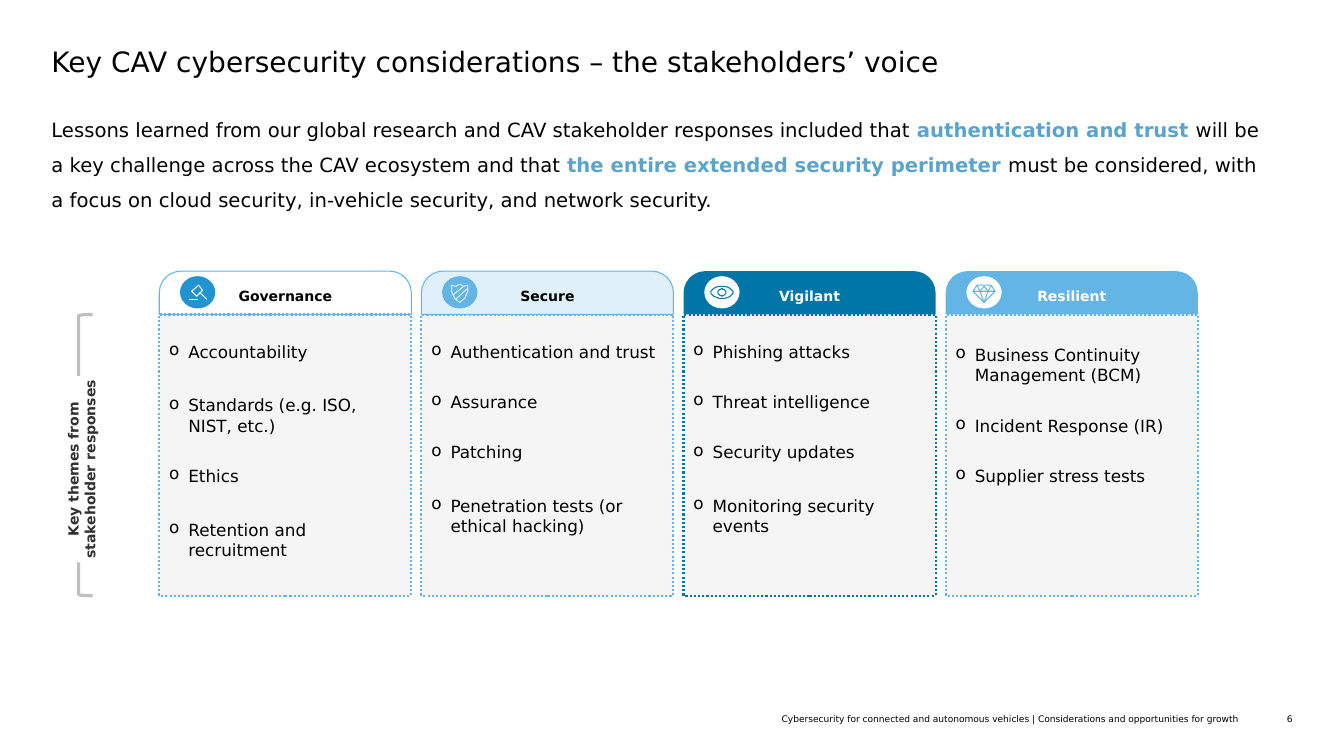
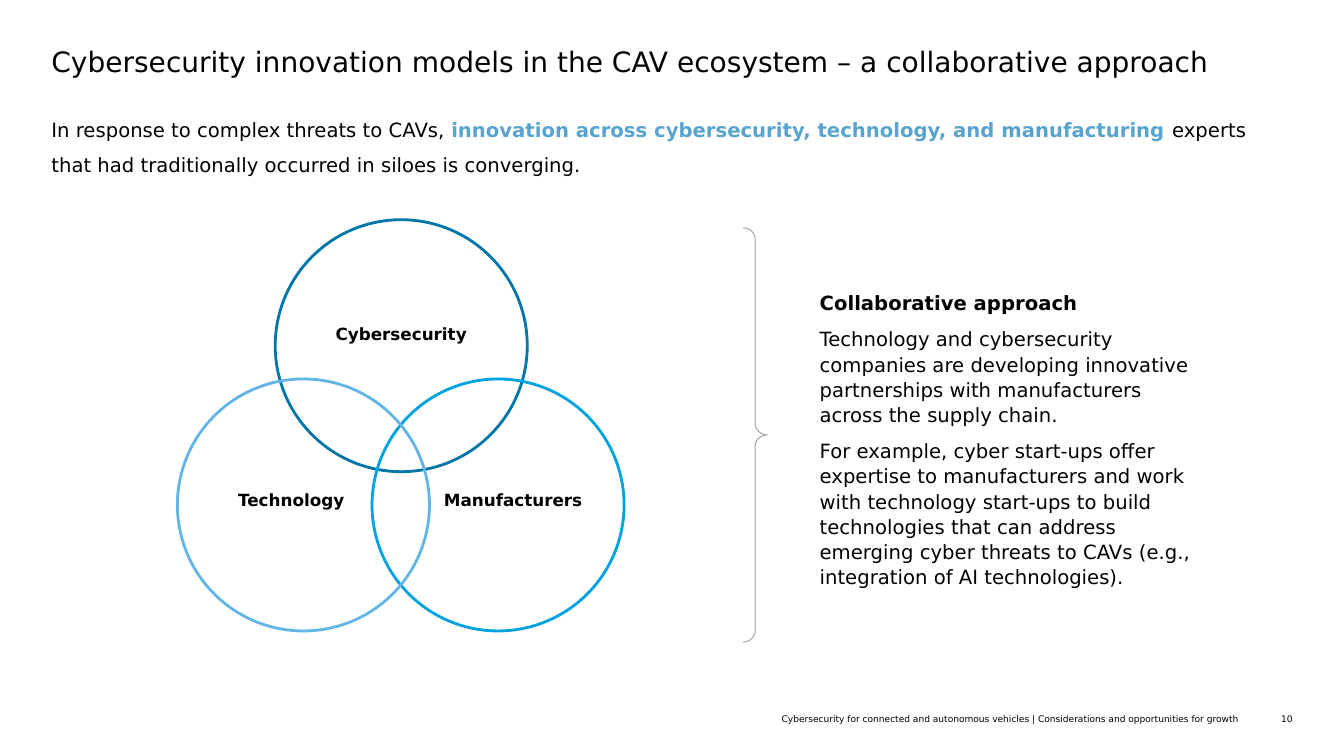
import math

from lxml import etree
from pptx import Presentation
from pptx import util as u
from pptx.dml.color import RGBColor
from pptx.enum import dml, shapes, text
from pptx.oxml.ns import qn

FONT = "DejaVu Sans"
BLACK = RGBColor(0x00, 0x00, 0x00)
WHITE = RGBColor(0xFF, 0xFF, 0xFF)
CHARCOAL = RGBColor(0x31, 0x31, 0x31)
PANEL_GREY = RGBColor(0xF2, 0xF2, 0xF2)
BRACKET_GREY = RGBColor(0xBF, 0xBF, 0xBF)
BRACE_GREY = RGBColor(0xA6, 0xA6, 0xA6)
ACCENT = RGBColor(0x59, 0xA4, 0xCF)
PALE_BLUE = RGBColor(0xE0, 0xF0, 0xFA)
LIGHT_BLUE = RGBColor(0x62, 0xB5, 0xE5)
MID_BLUE = RGBColor(0x23, 0x92, 0xD2)
CYAN = RGBColor(0x00, 0xA3, 0xE0)
DEEP_BLUE = RGBColor(0x00, 0x76, 0xA8)

SHAPE = shapes.MSO_SHAPE
CENTER, RIGHT = text.PP_ALIGN.CENTER, text.PP_ALIGN.RIGHT
MIDDLE = text.MSO_ANCHOR.MIDDLE
FOOTER = ("Cybersecurity for connected and autonomous vehicles | "
          "Considerations and opportunities for growth")

# Column layout
COL_LEFT, COL_STEP, COL_W = 1.58, 2.6, 2.5
HEAD_TOP, HEAD_H, PANEL_H = 2.69, 0.43, 2.79
PANEL_TOP = HEAD_TOP + HEAD_H


def ellipse(rx, ry, power=1):
    """Closed outline around the origin; a higher power sharpens the ends."""
    angles = [math.radians(a) for a in range(0, 361, 15)]
    return [(rx * math.cos(a), ry * math.sin(a) * abs(math.sin(a)) ** (power - 1))
            for a in angles]


# Icon strokes, in hundredths of an inch from the disc centre
GAVEL = [[(-9, 7), (0, 7)], [(-6, -1), (1, -7), (5, -2), (-1, 4), (-6, -1)],
         [(2, 0), (9, 7)]]
SHIELD = [[(-8, -7), (-4, -6), (0, -8), (4, -6), (8, -7), (8, -1), (5, 6),
           (0, 10), (-5, 6), (-8, -1), (-8, -7)],
          [(-7, 3), (4, -6)], [(-4, 7), (8, -4)]]
EYE = [ellipse(11, 6, 1.5), ellipse(4, 3.5)]
DIAMOND = [[(-11, -1), (-7, -7), (7, -7), (11, -1), (0, 10), (-11, -1), (11, -1)],
           [(-7, -7), (-4, -1), (0, -6), (4, -1), (7, -7)],
           [(-4, -1), (0, 10), (4, -1)]]


def style_run(r, size, color=BLACK, bold=False):
    r.font.name, r.font.size, r.font.bold = FONT, u.Pt(size), bold
    r.font.color.rgb = color


def set_frame(tf, insets=(0, 0, 0, 0), anchor=text.MSO_ANCHOR.TOP, wrap=True):
    tf.margin_left, tf.margin_top, tf.margin_right, tf.margin_bottom = map(u.Inches, insets)
    tf.vertical_anchor, tf.word_wrap = anchor, wrap


def write(p, content, size, color=BLACK, bold=False, align=None):
    p.text = content
    p.alignment = align
    for r in p.runs:
        style_run(r, size, color, bold)


def add_text(s, box, size=14, content="", align=None, anchor=text.MSO_ANCHOR.TOP):
    tf = s.shapes.add_textbox(*map(u.Inches, box)).text_frame
    set_frame(tf, anchor=anchor)
    write(tf.paragraphs[0], content, size, align=align)
    return tf


def add_shape(s, kind, box, fill=None, line=None, width=0.75):
    sp = s.shapes.add_shape(kind, *map(u.Inches, box))
    finish(sp, fill, line, width)
    return sp


def finish(sp, fill, line, width):
    sp.shadow.inherit = False
    if fill is None:
        sp.fill.background()
    else:
        sp.fill.solid()
        sp.fill.fore_color.rgb = fill
    if line is None:
        sp.line.fill.background()
    else:
        sp.line.color.rgb = line
        sp.line.width = u.Pt(width)


def add_base(prs, title, lead, page):
    """Slide with title, lead sentence (odd parts emphasised) and footer."""
    s = prs.slides.add_slide(prs.slide_layouts[6])
    add_text(s, (0.51, 0.44, 12.31, 0.37), 20, title)
    p = add_text(s, (0.51, 1.05, 12.1, 0.99)).paragraphs[0]
    p.line_spacing = 1.5
    for i, part in enumerate(lead):
        r = p.add_run()
        r.text = part
        style_run(r, 14, ACCENT if i % 2 else BLACK, bool(i % 2))
    add_text(s, (7.58, 7.08, 4.71, 0.11), 6.5, FOOTER, RIGHT, MIDDLE)
    add_text(s, (12.52, 7.08, 0.3, 0.11), 6.5, str(page), RIGHT, MIDDLE)
    return s


def add_icon(s, cx, cy, strokes, disc, ink):
    w, h = 0.35, 0.32
    add_shape(s, SHAPE.OVAL, (cx - w / 2, cy - h / 2, w, h), disc)
    fb = s.shapes.build_freeform(*strokes[0][0], scale=u.Inches(0.01))
    for i, stroke in enumerate(strokes):
        if i:
            fb.move_to(*stroke[0])
        fb.add_line_segments(stroke[1:], close=False)
    finish(fb.convert_to_shape(u.Inches(cx), u.Inches(cy)), None, ink, 0.75)


def add_bullet(p):
    pPr = p._p.get_or_add_pPr()
    pPr.set("marL", str(u.Inches(0.19)))
    pPr.set("indent", str(-u.Inches(0.19)))
    etree.SubElement(pPr, qn("a:buChar")).set("char", "o")


def add_panel(s, left, items, line):
    sp = add_shape(s, SHAPE.RECTANGLE, (left, PANEL_TOP, COL_W, PANEL_H),
                   PANEL_GREY, line, 1.5)
    sp.line.dash_style = dml.MSO_LINE.ROUND_DOT
    clr = sp.fill._xPr.find(qn("a:solidFill")).find(qn("a:srgbClr"))
    etree.SubElement(clr, qn("a:alpha")).set("val", "72000")
    tf = sp.text_frame
    set_frame(tf, (0.1, 0.3, 0.1, 0.1))
    for i, (item, wraps) in enumerate(items):
        p = tf.add_paragraph() if i else tf.paragraphs[0]
        add_bullet(p)
        write(p, item, 12, align=text.PP_ALIGN.LEFT)
        p.space_after = u.Pt(12)
        if i:
            p.space_before = u.Pt(12)
        if not wraps:
            p.line_spacing = u.Pt(12)


def add_column(s, i, name, items, fill, outline, ink, icon, disc, icon_ink, border):
    left = COL_LEFT + i * COL_STEP
    add_panel(s, left, items, border)
    sp = add_shape(s, SHAPE.ROUND_2_SAME_RECTANGLE, (left, HEAD_TOP, COL_W, HEAD_H),
                   fill, outline)
    sp.adjustments[0], sp.adjustments[1] = 0.5, 0
    set_frame(sp.text_frame, anchor=MIDDLE)
    p = sp.text_frame.paragraphs[0]
    write(p, name, 10, ink, True, CENTER)
    p.line_spacing, p.space_after = u.Pt(12), u.Pt(12)
    add_icon(s, left + 0.38, 2.9, icon, disc, icon_ink)


def add_circle(s, left, top, name, line, insets):
    sp = add_shape(s, SHAPE.OVAL, (left, top, 2.5, 2.5), None, line, 2)
    set_frame(sp.text_frame, insets, MIDDLE)
    write(sp.text_frame.paragraphs[0], name, 12, BLACK, True, CENTER)


def build_considerations(prs):
    s = add_base(prs, "Key CAV cybersecurity considerations – the stakeholders’ voice", [
        "Lessons learned from our global research and CAV stakeholder responses included that ",
        "authentication and trust ",
        "will be a key challenge across the CAV ecosystem and that ",
        "the entire extended security perimeter ",
        "must be considered, with a focus on cloud security, in-vehicle security, "
        "and network security."], 6)

    # Side bracket and its rotated label
    add_shape(s, SHAPE.LEFT_BRACKET, (0.78, PANEL_TOP, 0.14, PANEL_H), None, BRACKET_GREY, 2.25)
    sp = add_shape(s, SHAPE.RECTANGLE, (-0.15, 4.52, 1.85, 0.27), WHITE)
    sp.rotation = 270
    set_frame(sp.text_frame, wrap=False)
    write(sp.text_frame.paragraphs[0], "Key themes from\vstakeholder responses",
          10, CHARCOAL, True, CENTER)

    # Four themes; True marks an item that runs over two lines
    columns = [
        ("Governance", [("Accountability", False), ("Standards (e.g. ISO, NIST, etc.)", True),
                        ("Ethics", False), ("Retention and recruitment", True)],
         None, LIGHT_BLUE, BLACK, GAVEL, MID_BLUE, WHITE, LIGHT_BLUE),
        ("Secure", [("Authentication and trust", False), ("Assurance", False),
                    ("Patching", False), ("Penetration tests (or ethical hacking)", True)],
         PALE_BLUE, LIGHT_BLUE, BLACK, SHIELD, LIGHT_BLUE, PALE_BLUE, LIGHT_BLUE),
        ("Vigilant", [("Phishing attacks", False), ("Threat intelligence", False),
                      ("Security updates", False), ("Monitoring security events", True)],
         DEEP_BLUE, None, WHITE, EYE, WHITE, DEEP_BLUE, DEEP_BLUE),
        ("Resilient", [("Business Continuity Management (BCM)", True),
                       ("Incident Response (IR)", False), ("Supplier stress tests", False)],
         LIGHT_BLUE, None, WHITE, DIAMOND, WHITE, LIGHT_BLUE, LIGHT_BLUE),
    ]
    for i, column in enumerate(columns):
        add_column(s, i, *column)


def build_collaboration(prs):
    s = add_base(prs, "Cybersecurity innovation models in the CAV ecosystem – "
                      "a collaborative approach", [
        "In response to complex threats to CAVs, ",
        "innovation across cybersecurity, technology, and manufacturing ",
        "experts that had traditionally occurred in siloes is converging."], 10)

    # Overlapping circles; insets move each label away from the overlaps
    add_circle(s, 2.73, 2.18, "Cybersecurity", DEEP_BLUE, (0, 0, 0, 0.24))
    add_circle(s, 3.69, 3.76, "Manufacturers", CYAN, (0.3, 0, 0, 0.1))
    add_circle(s, 1.76, 3.76, "Technology", LIGHT_BLUE, (0, 0, 0.24, 0.1))

    # Brace and explanation
    brace = add_shape(s, SHAPE.RIGHT_BRACE, (7.37, 2.26, 0.24, 4.11), None, BRACE_GREY)
    brace.adjustments[0], brace.adjustments[1] = 0.47, 0.5
    tf = add_text(s, (8.13, 2.87, 3.77, 3.05))
    paragraphs = [
        "Collaborative approach",
        "Technology and cybersecurity companies are developing innovative partnerships "
        "with manufacturers across the supply chain.",
        "For example, cyber start-ups offer expertise to manufacturers and work with "
        "technology start-ups to build technologies that can address emerging cyber "
        "threats to CAVs (e.g., integration of AI technologies)."]
    for i, content in enumerate(paragraphs):
        p = tf.add_paragraph() if i else tf.paragraphs[0]
        write(p, content, 14, bold=i == 0)
        p.line_spacing, p.space_after = 1.07, u.Pt(8)


def main():
    prs = Presentation()
    prs.slide_width, prs.slide_height = u.Inches(13.33), u.Inches(7.5)
    build_considerations(prs)
    build_collaboration(prs)
    prs.save("out.pptx")


if __name__ == "__main__":
    main()
